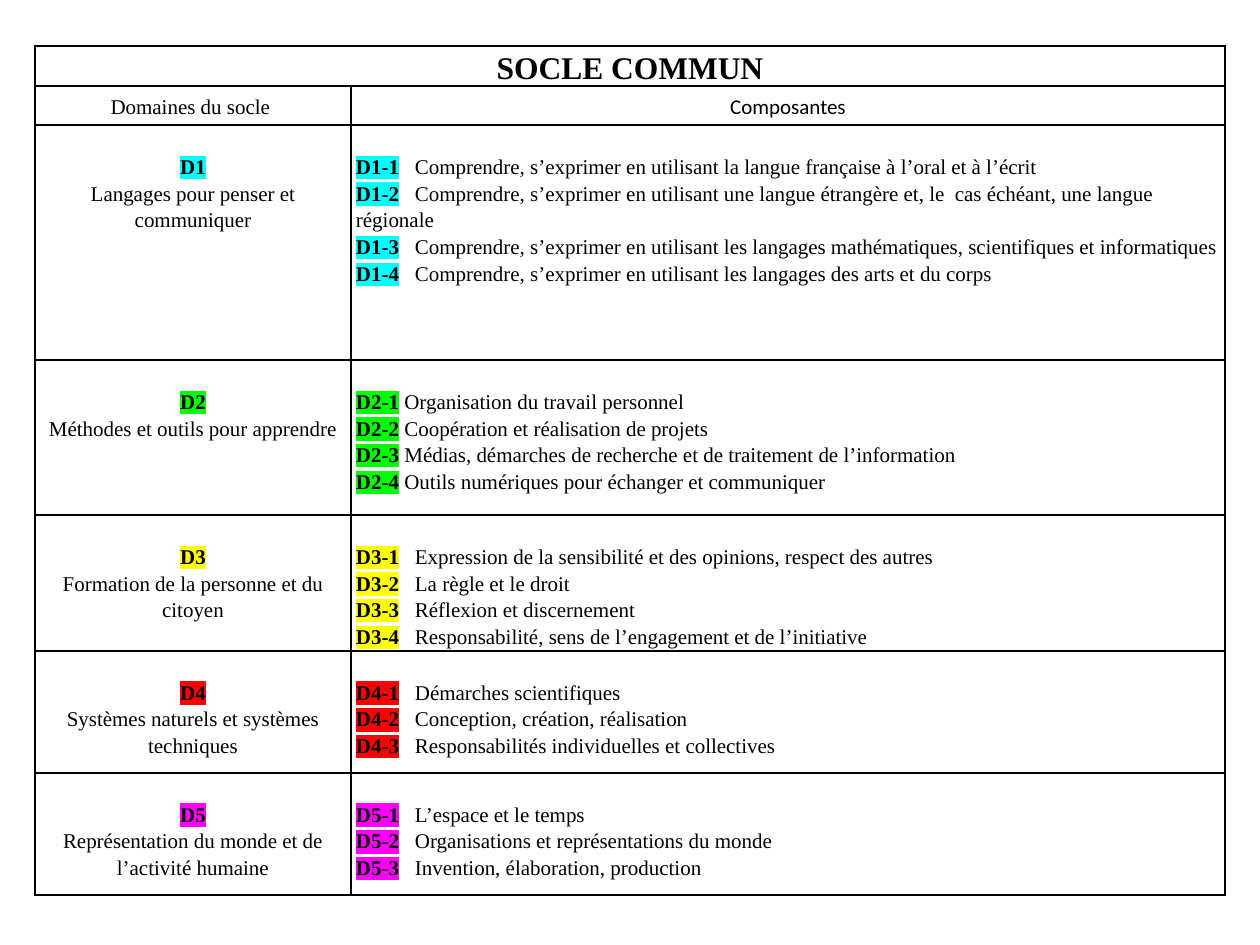
"""Build a one-slide table of the five domains of the socle commun."""
from lxml import etree
from pptx import Presentation
from pptx.dml.color import RGBColor
from pptx.enum.text import MSO_ANCHOR, PP_ALIGN
from pptx.oxml.ns import qn
from pptx.util import Emu, Pt

CENTER, LEFT = PP_ALIGN.CENTER, PP_ALIGN.LEFT
TOP, MIDDLE = MSO_ANCHOR.TOP, MSO_ANCHOR.MIDDLE
SERIF, SANS = "Times New Roman", "Calibri"
BLACK = "000000"

TITLE = "SOCLE COMMUN"
HEADINGS = [("Domaines du socle ", SERIF), ("Composantes", SANS)]
DOMAINS = [
    ("D1", "00FFFF", "\t", "Langages pour penser et communiquer", [
        "Comprendre, s’exprimer en utilisant la langue française à l’oral et à l’écrit",
        "Comprendre, s’exprimer en utilisant une langue étrangère et, le  cas échéant, une langue régionale",
        "Comprendre, s’exprimer en utilisant les langages mathématiques, scientifiques et informatiques",
        "Comprendre, s’exprimer en utilisant les langages des arts et du corps",
    ]),
    ("D2", "00FF00", " ", "Méthodes et outils pour apprendre", [
        "Organisation du travail personnel",
        "Coopération et réalisation de projets",
        "Médias, démarches de recherche et de traitement de l’information",
        "Outils numériques pour échanger et communiquer",
    ]),
    ("D3", "FFFF00", "\t", "Formation de la personne et du citoyen", [
        "Expression de la sensibilité et des opinions, respect des autres",
        "La règle et le droit",
        "Réflexion et discernement",
        "Responsabilité, sens de l’engagement et de l’initiative",
    ]),
    ("D4", "FF0000", "\t", "Systèmes naturels et systèmes techniques", [
        "Démarches scientifiques",
        "Conception, création, réalisation",
        "Responsabilités individuelles et collectives",
    ]),
    ("D5", "FF00FF", "\t", "Représentation du monde et de l’activité humaine", [
        "L’espace et le temps",
        "Organisations et représentations du monde",
        "Invention, élaboration, production",
    ]),
]
TABLE_LEFT, TABLE_TOP = 35, 46
COLUMN_WIDTHS = [316, 874]
ROW_HEIGHTS = [23, 39, 235, 155, 136, 122, 122]
SIDE_MARGIN, LEAD_MARGIN, TAB_STOP = 5, 27, 59


def px(length):
    return Emu(length * 914400 // 126)


def color(value):
    return RGBColor.from_string(value)


def add_run(paragraph, text, size=12, font=SERIF, bold=False, highlight=None):
    run = paragraph.add_run()
    run.text = text
    run.font.color.rgb = color(BLACK)
    for attribute, value in {"size": Pt(size), "name": font, "bold": bold}.items():
        setattr(run.font, attribute, value)
    if highlight:
        mark = etree.Element(qn("a:highlight"))
        etree.SubElement(mark, qn("a:srgbClr"), val=highlight)
        run.font.color.rgb = color(BLACK)
        run._r.rPr.find(qn("a:solidFill")).addnext(mark)


def add_borders(cell):
    properties = cell._tc.get_or_add_tcPr()
    for index, side in enumerate(("lnL", "lnR", "lnT", "lnB")):
        border = etree.Element(qn(f"a:{side}"), w=str(Pt(1)))
        line_fill = etree.SubElement(border, qn("a:solidFill"))
        etree.SubElement(line_fill, qn("a:srgbClr"), val=BLACK)
        properties.insert(index, border)


def fill_cell(cell, lines, align=CENTER, anchor=TOP, lead=0):
    """Write lines, each a list of run formats, into a cell."""
    layout = {"margin_left": px(SIDE_MARGIN), "margin_right": px(SIDE_MARGIN),
              "margin_top": px(lead), "margin_bottom": 0, "vertical_anchor": anchor}
    for attribute, value in layout.items():
        setattr(cell, attribute, value)
    frame = cell.text_frame
    for index, runs in enumerate(lines):
        paragraph = frame.add_paragraph() if index else frame.paragraphs[0]
        paragraph.alignment = align
        paragraph.line_spacing = 1.15
        if any(run["text"] == "\t" for run in runs):
            tabs = etree.SubElement(paragraph._p.get_or_add_pPr(), qn("a:tabLst"))
            etree.SubElement(tabs, qn("a:tab"), pos=str(px(TAB_STOP)), algn="l")
        for run in runs:
            add_run(paragraph, **run)


def main():
    deck = Presentation()
    deck.slide_width, deck.slide_height = px(1260), px(945)
    slide = deck.slides.add_slide(deck.slide_layouts[6])
    table = slide.shapes.add_table(
        len(ROW_HEIGHTS), len(COLUMN_WIDTHS), px(TABLE_LEFT), px(TABLE_TOP),
        px(sum(COLUMN_WIDTHS)), px(sum(ROW_HEIGHTS))).table
    for column, width in zip(table.columns, COLUMN_WIDTHS):
        column.width = px(width)
    for row, height in zip(table.rows, ROW_HEIGHTS):
        row.height = px(height)
    for cell in table.iter_cells():
        cell.fill.background()
        add_borders(cell)

    table.cell(0, 0).merge(table.cell(0, 1))
    fill_cell(table.cell(0, 0), [[{"text": TITLE, "size": 18, "bold": True}]])
    for column, (heading, font) in enumerate(HEADINGS):
        fill_cell(table.cell(1, column), [[{"text": heading, "font": font}]], anchor=MIDDLE)
    for row, (code, tint, gap, domain, components) in enumerate(DOMAINS, 2):
        tag = {"bold": True, "highlight": tint}
        fill_cell(table.cell(row, 0), [[{"text": code, **tag}], [{"text": domain}]],
                  lead=LEAD_MARGIN)
        fill_cell(table.cell(row, 1),
                  [[{"text": f"{code}-{number}", **tag}, {"text": gap}, {"text": component}]
                   for number, component in enumerate(components, 1)],
                  align=LEFT, lead=LEAD_MARGIN)
    deck.save("out.pptx")


if __name__ == "__main__":
    main()
